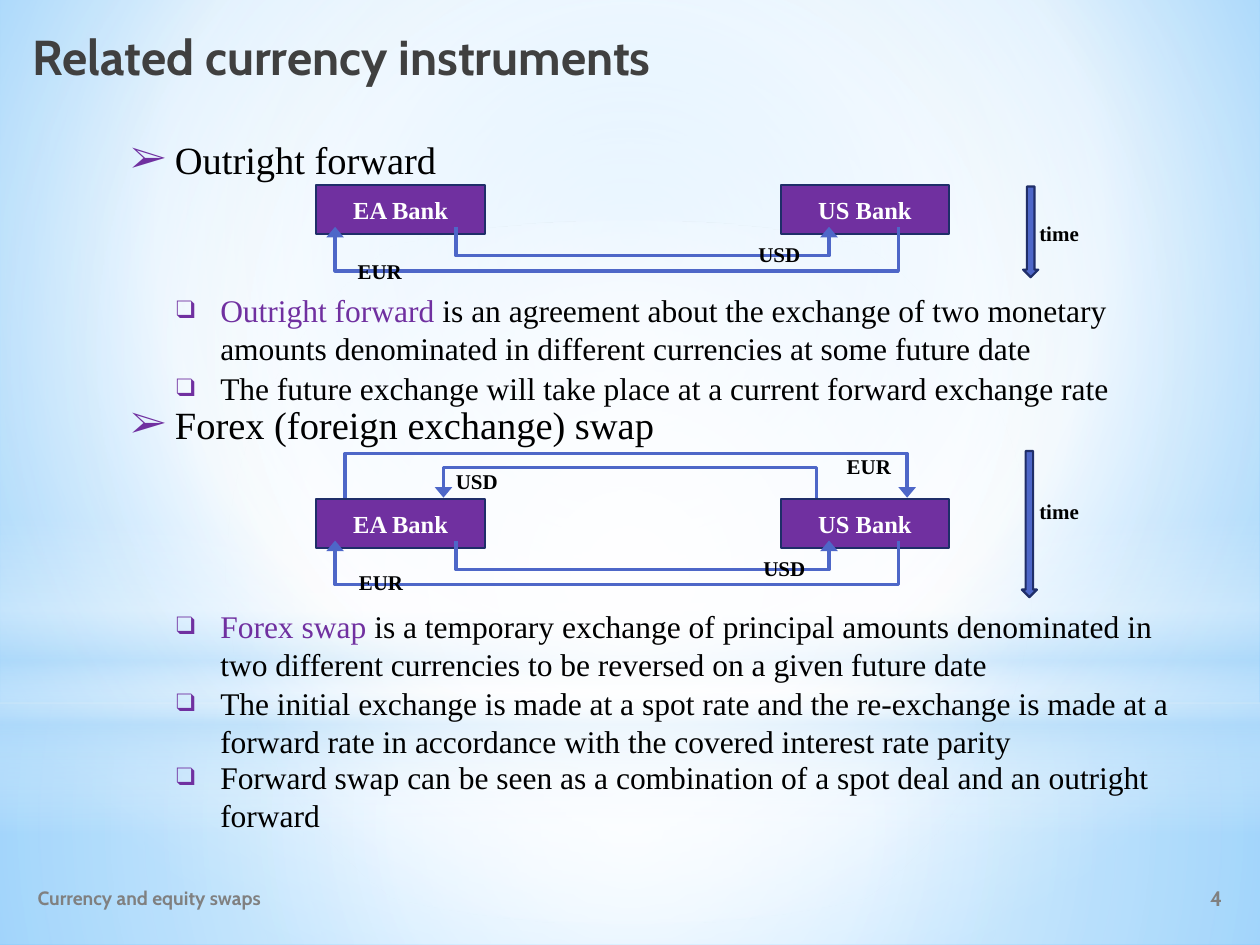
from lxml import etree
from pptx import Presentation
from pptx import util as u
from pptx.dml.color import RGBColor
from pptx.enum import shapes, text
from pptx.oxml.ns import qn

THEME = {
    "serif": "Times New Roman", "sans": "Cabin",
    "ink": "000000", "title": "404040", "grey": "808080", "white": "FFFFFF",
    "accent": "7030A0", "edge": "1F2E69", "flow": "4E67C8",
    "title_pt": 28, "head_pt": 22, "body_pt": 18, "bank_pt": 14,
    "label_pt": 12, "foot_pt": 11,
}

LEFT, MID, RIGHT = text.PP_ALIGN.LEFT, text.PP_ALIGN.CENTER, text.PP_ALIGN.RIGHT
TOP, CENTRE = text.MSO_ANCHOR.TOP, text.MSO_ANCHOR.MIDDLE
KIND = shapes.MSO_SHAPE

# Gradient stops: position %, colour, opacity %
SKY = [(0, "9ED5FF", 100), (60, "FFFFFF", 100), (100, "5BB9FF", 100)]
CORE = (50, 50, 50, 50)
# Kind, box, stops, focus rectangle (None for a vertical blend)
GLOWS = [
    (KIND.RECTANGLE, (0, 5.58, 10, 1.92),
     [(0, "FFFFFF", 91), (37, "FFFFFF", 76), (100, "B4DCFA", 79)], CORE),
    (KIND.RECTANGLE, (0, 0, 10, 5.58),
     [(0, "FFFFFF", 89), (48, "FFFFFF", 62), (100, "B4DCFA", 79)], CORE),
    (KIND.RECTANGLE, (0, 4.12, 10, 2.5),
     [(0, "FFFFFF", 0), (29, "FFFFFF", 30), (45, "B4DCFA", 40),
      (55, "FFFFFF", 26), (65, "B4DCFA", 60), (100, "FFFFFF", 0)], None),
    (KIND.OVAL, (0, 1.75, 10, 5.58),
     [(0, "FFFFFF", 100), (56, "FFFFFF", 0)], CORE),
]

HEADS = [
    ("Outright forward", (0.94, 1.03, 3.27, 0.47)),
    ("Forex (foreign exchange) swap", (0.94, 3.13, 4.88, 0.47)),
]
# Top, width, height, highlighted term, remaining words
POINTS = [
    (2.26, 8.43, 0.71, "Outright forward ",
     "is an agreement about the exchange of two monetary amounts "
     "denominated in different currencies at some future date"),
    (2.88, 8.43, 0.4, "",
     "The future exchange will take place at a current forward exchange rate"),
    (4.77, 8.35, 0.71, "Forex swap ",
     "is a temporary exchange of principal amounts denominated in "
     "two different currencies to be reversed on a given future date"),
    (5.38, 8.27, 0.71, "",
     "The initial exchange is made at a spot rate and the re-exchange is made "
     "at a forward rate in accordance with the covered interest rate parity"),
    (5.97, 8.43, 0.71, "",
     "Forward swap can be seen as a combination of a spot deal "
     "and an outright forward"),
]

BANKS = [("EA Bank", 2.51, 1.34), ("US Bank", 6.2, 1.33)]
# Flows: start x, end x, depth from the bank (negative goes above)
LATER = [(7.13, 2.66, 0.35), (3.62, 6.58, 0.23)]
FIRST = [(6.48, 3.52, -0.24), (2.74, 7.2, -0.35)]
DEALS = [
    {"top": 1.47, "flows": LATER, "time": (8.12, 1.48, 0.72),
     "labels": [("USD", 5.78, 1.87, RIGHT), ("EUR", 2.74, 2, LEFT),
                ("time", 8.15, 1.7, LEFT)]},
    {"top": 3.96, "flows": FIRST + LATER, "time": (8.11, 3.58, 1.16),
     "labels": [("USD", 3.52, 3.67, LEFT), ("USD", 5.82, 4.36, RIGHT),
                ("EUR", 2.75, 4.47, LEFT), ("EUR", 6.5, 3.55, RIGHT),
                ("time", 8.15, 3.91, LEFT)]},
]


def rgb(name):
    return RGBColor.from_string(THEME[name])


def sub(node, tag, **attrs):
    return etree.SubElement(node, qn(tag), {k: str(v) for k, v in attrs.items()})


def blend(fill, root, stops, focus):
    """Give the fill found under root its own gradient stops."""
    fill.gradient()
    grad = next(root.iter(qn("a:gradFill")))
    for child in list(grad):
        grad.remove(child)
    rows = sub(grad, "a:gsLst")
    for pos, color, alpha in stops:
        stop = sub(rows, "a:gs", pos=pos * 1000)
        tint = sub(stop, "a:srgbClr", val=color)
        if alpha < 100:
            sub(tint, "a:alpha", val=alpha * 1000)
    if focus:
        ring = sub(grad, "a:path", path="circle")
        sub(ring, "a:fillToRect", **{k: v * 1000 for k, v in zip("ltrb", focus)})
    else:
        sub(grad, "a:lin", ang=5400000, scaled=0)


def style(run, size, color, font="serif", bold=False):
    run.font.size, run.font.bold = u.Pt(THEME[size]), bold
    run.font.name, run.font.color.rgb = THEME[font], rgb(color)


def write(slide, box, parts, size, font="serif", bold=False, align=LEFT, anchor=TOP):
    """Add a text box; parts are (words, colour) pairs."""
    frame = slide.shapes.add_textbox(*map(u.Inches, box)).text_frame
    frame.word_wrap, frame.vertical_anchor = True, anchor
    para = frame.paragraphs[0]
    para.alignment = align
    for words, color in parts:
        run = para.add_run()
        run.text = words
        style(run, size, color, font, bold)
    return para


def bullet(para, mark, scale=100):
    props = para._p.get_or_add_pPr()
    props.set("marL", str(u.Inches(0.35)))
    props.set("indent", str(-u.Inches(0.35)))
    sub(sub(props, "a:buClr"), "a:srgbClr", val=THEME["accent"])
    sub(props, "a:buSzPct", val=scale * 1000)
    sub(props, "a:buFont", typeface=THEME["serif"])
    sub(props, "a:buChar", char=mark)


def block(slide, kind, box, color):
    shape = slide.shapes.add_shape(kind, *map(u.Inches, box))
    shape.shadow.inherit = False
    shape.fill.solid()
    shape.fill.fore_color.rgb = rgb(color)
    shape.line.color.rgb, shape.line.width = rgb("edge"), u.Pt(1.25)
    return shape


def flow(slide, start, end, base, depth):
    """Draw a three-sided path that leaves and re-enters at base."""
    far = base + depth
    spots = [(start, base), (start, far), (end, far), (end, base)]
    first, *rest = [(u.Inches(x), u.Inches(y)) for x, y in spots]
    pen = slide.shapes.build_freeform(*first)
    pen.add_line_segments(rest, close=False)
    shape = pen.convert_to_shape()
    shape.shadow.inherit = False
    shape.fill.background()
    shape.line.color.rgb, shape.line.width = rgb("flow"), u.Pt(2)
    sub(shape.line._get_or_add_ln(), "a:tailEnd", type="triangle", w="lg")


def draw(slide, deal):
    top = deal["top"]
    for name, left, width in BANKS:
        bank = block(slide, KIND.RECTANGLE, (left, top, width, 0.39), "accent")
        frame = bank.text_frame
        frame.text, frame.vertical_anchor = name, CENTRE
        frame.paragraphs[0].alignment = MID
        style(frame.paragraphs[0].runs[0], "bank_pt", "white", bold=True)
    for start, end, depth in deal["flows"]:
        flow(slide, start, end, top + (0.33 if depth > 0 else -0.01), depth)
    left, head, tall = deal["time"]
    block(slide, KIND.DOWN_ARROW, (left, head, 0.12, tall), "flow")
    for words, x, y, align in deal["labels"]:
        write(slide, (x, y, 0.67, 0.3), [(words, "ink")], "label_pt",
              bold=True, align=align)


def main():
    deck = Presentation()
    deck.slide_width, deck.slide_height = u.Inches(10), u.Inches(7.5)
    slide = deck.slides.add_slide(deck.slide_layouts[6])
    blend(slide.background.fill, slide.element, SKY, (20, 10, 20, 60))
    for kind, box, stops, focus in GLOWS:
        glow = slide.shapes.add_shape(kind, *map(u.Inches, box))
        glow.shadow.inherit = False
        glow.line.fill.background()
        blend(glow.fill, glow.element, stops, focus)

    write(slide, (0.2, 6.93, 3.62, 0.39), [("Currency and equity swaps", "grey")],
          "foot_pt", "sans", True, anchor=CENTRE)
    write(slide, (7.83, 6.93, 1.97, 0.39), [("4", "grey")],
          "label_pt", "sans", True, RIGHT, CENTRE)
    write(slide, (0.16, 0.16, 6.18, 0.71),
          [("Related currency instruments", "title")], "title_pt", "sans", True)
    for words, box in HEADS:
        bullet(write(slide, box, [(words, "ink")], "head_pt"), "➢")
    for top, width, height, term, rest in POINTS:
        parts = [(term, "accent")] * bool(term) + [(rest, "ink")]
        bullet(write(slide, (1.3, top, width, height), parts, "body_pt"), "❑", 80)
    for deal in DEALS:
        draw(slide, deal)
    deck.save("out.pptx")


if __name__ == "__main__":
    main()
